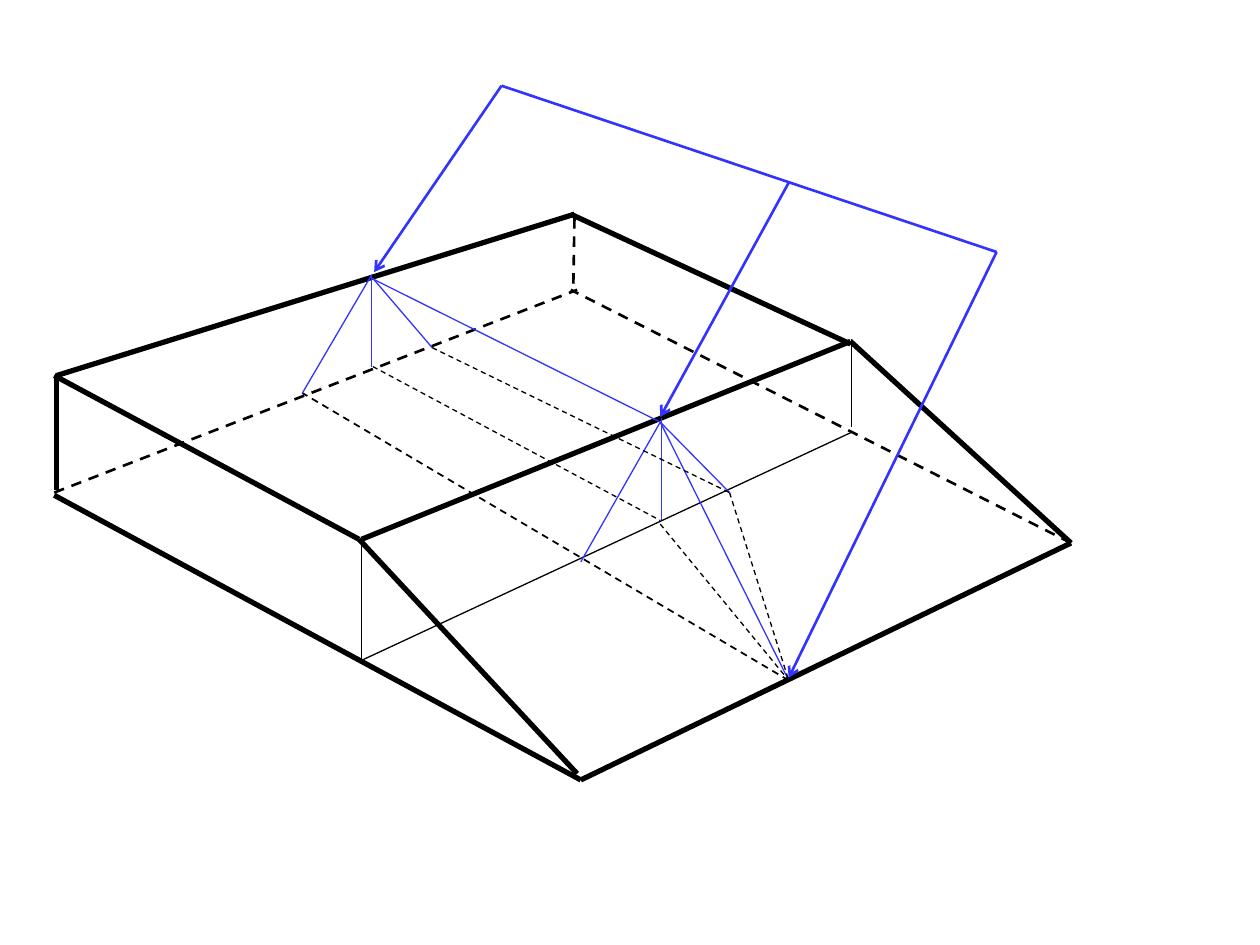
"""Wedge-ended block in perspective, with hidden edges and three blue pointers."""
from lxml.etree import SubElement
from pptx import Presentation
from pptx.dml.color import RGBColor
from pptx.enum.dml import MSO_LINE
from pptx.enum.shapes import MSO_CONNECTOR
from pptx.oxml.ns import qn
from pptx.util import Pt

BLACK, BLUE = "000000", "3333FF"

deck = Presentation()
deck.slide_width, deck.slide_height = Pt(720), Pt(540)
slide = deck.slides.add_slide(deck.slide_layouts[6])


def draw_edge(ends, color, width, dashed=False, arrow=False):
    """Draw one straight edge from (x1, y1) to (x2, y2) in points."""
    edge = slide.shapes.add_connector(MSO_CONNECTOR.STRAIGHT, *map(Pt, ends))
    edge.line.color.rgb = RGBColor.from_string(color)
    edge.line.width = Pt(width)
    if dashed:
        edge.line.dash_style = MSO_LINE.DASH
    properties = edge.line._get_or_add_ln()
    if arrow:
        SubElement(properties, qn("a:tailEnd"), type="arrow")
    SubElement(properties.getparent(), qn("a:effectLst"))


outer_edges = [
    (331.9, 445.7, 31, 283),
    (331.9, 445.7, 612, 310.3),
    (205.2, 308.2, 31, 214.6),
    (486, 196.6, 326.2, 122.4),
    (32.4, 214.6, 328.3, 122.4),
    (206.6, 308.2, 486, 195.1),
    (205.2, 308.2, 329.8, 442.1),
    (486, 195.1, 612, 310.3),
    (32.4, 214.6, 32.4, 280.1),
]
hidden_edges = [
    (328.3, 124.6, 327.6, 164.2),
    (31, 281.5, 329.8, 165.6),
    (612, 310.3, 326.2, 165.6),
]
base_diagonal = [(450.7, 388.8, 172.8, 224.6)]
wedge_section = [
    (206.6, 310.3, 206.6, 377.3),
    (205.2, 378, 486.7, 247),
    (486.7, 193.7, 486.7, 244.1),
]
blue_sections = [
    (212.4, 157, 212.4, 209.5),
    (212.4, 157, 172.8, 224.6),
    (213.1, 159.1, 247, 198.7),
    (212.4, 159.1, 377.3, 241.2),
    (378, 239, 378, 297.4),
    (331.9, 321.1, 377.3, 241.2),
    (377.3, 241.2, 416.9, 281.5),
    (377.3, 241.2, 450.7, 388.8),
]
base_traces = [
    (213.1, 209.5, 377.3, 297.4),
    (247, 198.7, 416.9, 281.5),
    (416.9, 281.5, 450.7, 388.8),
    (377.3, 299.5, 450.7, 388.8),
]
pointers = [
    (286.6, 49, 213.8, 155.5),
    (450.7, 104.4, 377.3, 238.3),
    (569.5, 144, 450.7, 387.4),
]
pointer_bar = [(286.6, 49, 569.5, 144)]

for edges, color, width, dashed, arrow in [
    (outer_edges, BLACK, 3, False, False),
    (hidden_edges, BLACK, 1.5, True, False),
    (base_diagonal, BLACK, 1, True, False),
    (wedge_section, BLACK, 0.75, False, False),
    (blue_sections, BLUE, 0.75, False, False),
    (base_traces, BLACK, 0.75, True, False),
    (pointers, BLUE, 1.5, False, True),
    (pointer_bar, BLUE, 1.5, False, False),
]:
    for ends in edges:
        draw_edge(ends, color, width, dashed, arrow)

deck.save("out.pptx")
